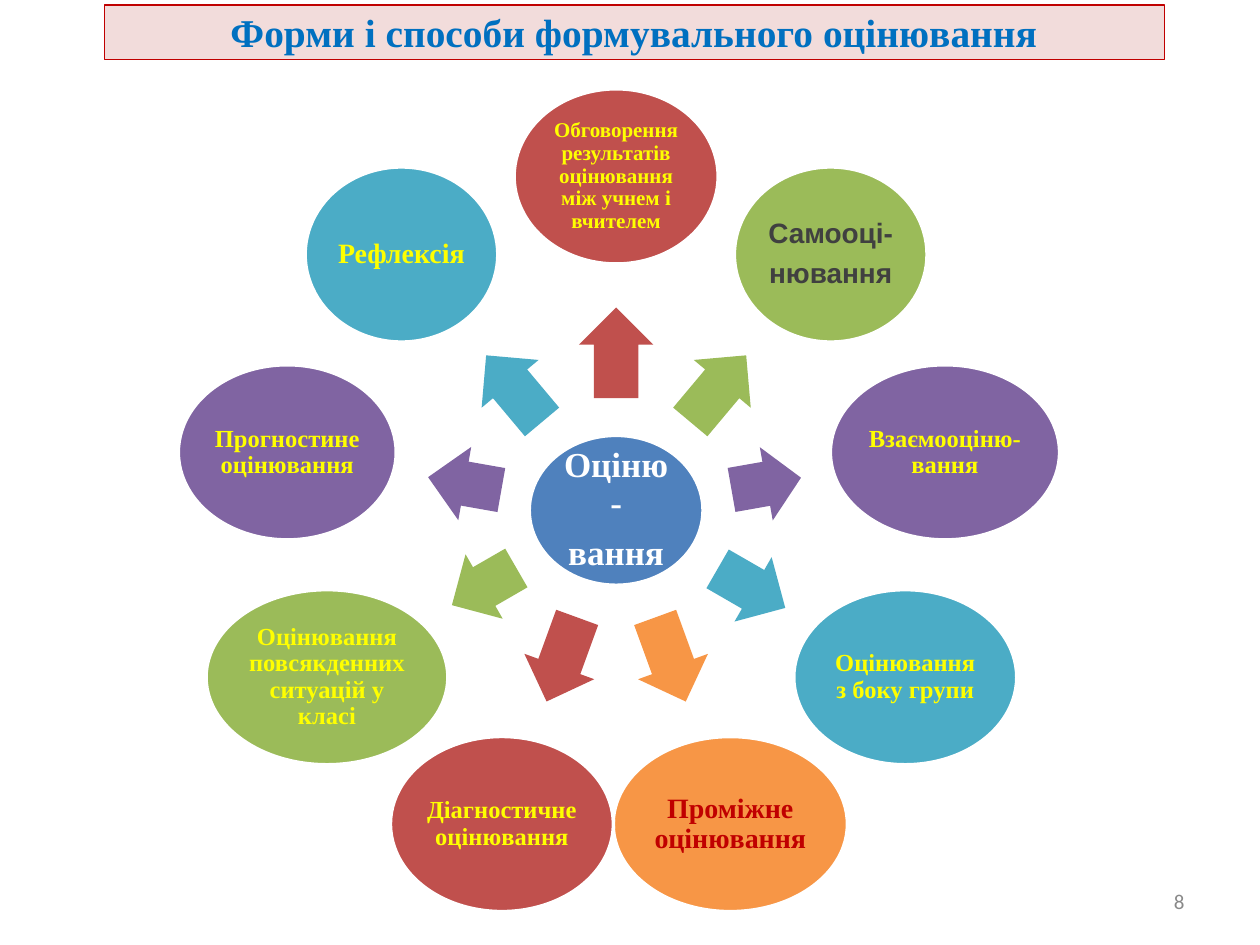
import math
import pptx
import pptx.dml.color
import pptx.enum.shapes
import pptx.enum.text
import pptx.util

Inches = pptx.util.Inches
Pt = pptx.util.Pt
RGBColor = pptx.dml.color.RGBColor
Shape = pptx.enum.shapes.MSO_SHAPE
Align = pptx.enum.text.PP_ALIGN
Anchor = pptx.enum.text.MSO_ANCHOR

WHITE = RGBColor(0xFF, 0xFF, 0xFF)
PINK = RGBColor(0xF2, 0xDC, 0xDB)
CRIMSON = RGBColor(0xC0, 0x00, 0x00)
AZURE = RGBColor(0x00, 0x70, 0xC0)
BLUE = RGBColor(0x4F, 0x81, 0xBD)
RED = RGBColor(0xC0, 0x50, 0x4D)
GREEN = RGBColor(0x9B, 0xBB, 0x59)
PURPLE = RGBColor(0x80, 0x64, 0xA2)
TEAL = RGBColor(0x4B, 0xAC, 0xC6)
ORANGE = RGBColor(0xF7, 0x96, 0x46)
YELLOW = RGBColor(0xFF, 0xFF, 0x00)
DARK = RGBColor(0x40, 0x40, 0x40)
GRAY = RGBColor(0x89, 0x89, 0x89)
SERIF = "Times New Roman"

# Clockwise from the top: lines, fill, width, size, font, ink, arrow length, arrow distance
FORMS = [
    (["Обговорення результатів оцінювання між учнем і вчителем"],
     RED, 1.62, 12, SERIF, YELLOW, 0.72, 1.25),
    (["Самооці-", "нювання"], GREEN, 1.53, 16, "Arial", DARK, 0.69, 1.26),
    (["Взаємооціню-вання"], PURPLE, 1.82, 14, SERIF, YELLOW, 0.56, 1.21),
    (["Оцінювання з боку групи"], TEAL, 1.77, 14, SERIF, YELLOW, 0.62, 1.24),
    (["Проміжне оцінювання"], ORANGE, 1.86, 16, SERIF, CRIMSON, 0.71, 1.26),
    (["Діагностичне оцінювання"], RED, 1.77, 14, SERIF, YELLOW, 0.71, 1.26),
    (["Оцінювання повсякденних ситуацій у класі"],
     GREEN, 1.92, 14, SERIF, YELLOW, 0.59, 1.21),
    (["Прогностине оцінювання"], PURPLE, 1.73, 14, SERIF, YELLOW, 0.59, 1.22),
    (["Рефлексія"], TEAL, 1.53, 16, SERIF, YELLOW, 0.69, 1.26),
]


def add_run(para, text, size, font, ink, bold=True):
    run = para.add_run()
    run.text = text
    run.font.size = Pt(size)
    run.font.name = font
    run.font.bold = bold
    run.font.color.rgb = ink


def add_solid(slide, kind, x, y, width, height, fill):
    """Place a filled shape centred on x, y."""
    shape = slide.shapes.add_shape(
        kind, Inches(x - width / 2), Inches(y - height / 2),
        Inches(width), Inches(height))
    shape.shadow.inherit = False
    shape.fill.solid()
    shape.fill.fore_color.rgb = fill
    return shape


def add_oval(slide, x, y, width, height, fill, lines, size, font, ink, inset=0.02):
    oval = add_solid(slide, Shape.OVAL, x, y, width, height, fill)
    oval.line.color.rgb = WHITE
    oval.line.width = Pt(2)
    frame = oval.text_frame
    frame.word_wrap = True
    frame.vertical_anchor = Anchor.MIDDLE
    frame.margin_left = frame.margin_right = Inches(inset)
    frame.margin_top = frame.margin_bottom = Inches(inset)
    for i, line in enumerate(lines):
        para = frame.add_paragraph() if i else frame.paragraphs[0]
        para.alignment = Align.CENTER
        para.line_spacing = 0.9
        para.space_after = Pt(size * 0.35)
        add_run(para, line, size, font, ink)


def add_arrow(slide, x, y, length, angle, fill):
    arrow = add_solid(slide, Shape.RIGHT_ARROW, x, y, length, 0.59, fill)
    arrow.adjustments[0] = 0.6
    arrow.adjustments[1] = 0.5
    arrow.rotation = angle % 360
    arrow.line.fill.background()


def add_title(slide, left, top, width, height):
    title = slide.shapes.title
    title.left, title.top = Inches(left), Inches(top)
    title.width, title.height = Inches(width), Inches(height)
    title.fill.solid()
    title.fill.fore_color.rgb = PINK
    title.line.color.rgb = CRIMSON
    title.line.width = Pt(0.75)
    frame = title.text_frame
    frame.auto_size = pptx.enum.text.MSO_AUTO_SIZE.NONE
    frame.vertical_anchor = Anchor.MIDDLE
    para = frame.paragraphs[0]
    para.alignment = Align.CENTER
    add_run(para, "Форми і способи формувального оцінювання", 22.5, SERIF, AZURE)


def add_wheel(slide, x, y, radius):
    # Hub
    add_oval(slide, x, y, 1.38, 1.19, BLUE, ["Оціню-", "вання"],
             20, SERIF, WHITE, 0.03)
    # Spokes at equal angles
    step = 360 / len(FORMS)
    for i, (lines, fill, width, size, font, ink, length, gap) in enumerate(FORMS):
        angle = -90 + i * step
        dx = math.cos(math.radians(angle))
        dy = math.sin(math.radians(angle))
        add_arrow(slide, x + gap * dx, y + gap * dy, length, angle, fill)
        add_oval(slide, x + radius * dx, y + radius * dy, width, 1.39,
                 fill, lines, size, font, ink)


def add_number(slide, left, top, width, height):
    box = slide.shapes.add_textbox(
        Inches(left), Inches(top), Inches(width), Inches(height))
    box.text_frame.word_wrap = True
    box.text_frame.vertical_anchor = Anchor.MIDDLE
    para = box.text_frame.paragraphs[0]
    para.alignment = Align.RIGHT
    add_run(para, "8", 12, "Calibri", GRAY, False)


def main():
    deck = pptx.Presentation()
    deck.slide_width, deck.slide_height = Inches(10), Inches(7.5)
    slide = deck.slides.add_slide(deck.slide_layouts[5])
    add_title(slide, 0.83, 0.04, 8.41, 0.43)
    add_wheel(slide, 4.89, 4.05, 2.65)
    add_number(slide, 7.17, 6.95, 2.33, 0.4)
    deck.save("out.pptx")


if __name__ == "__main__":
    main()
